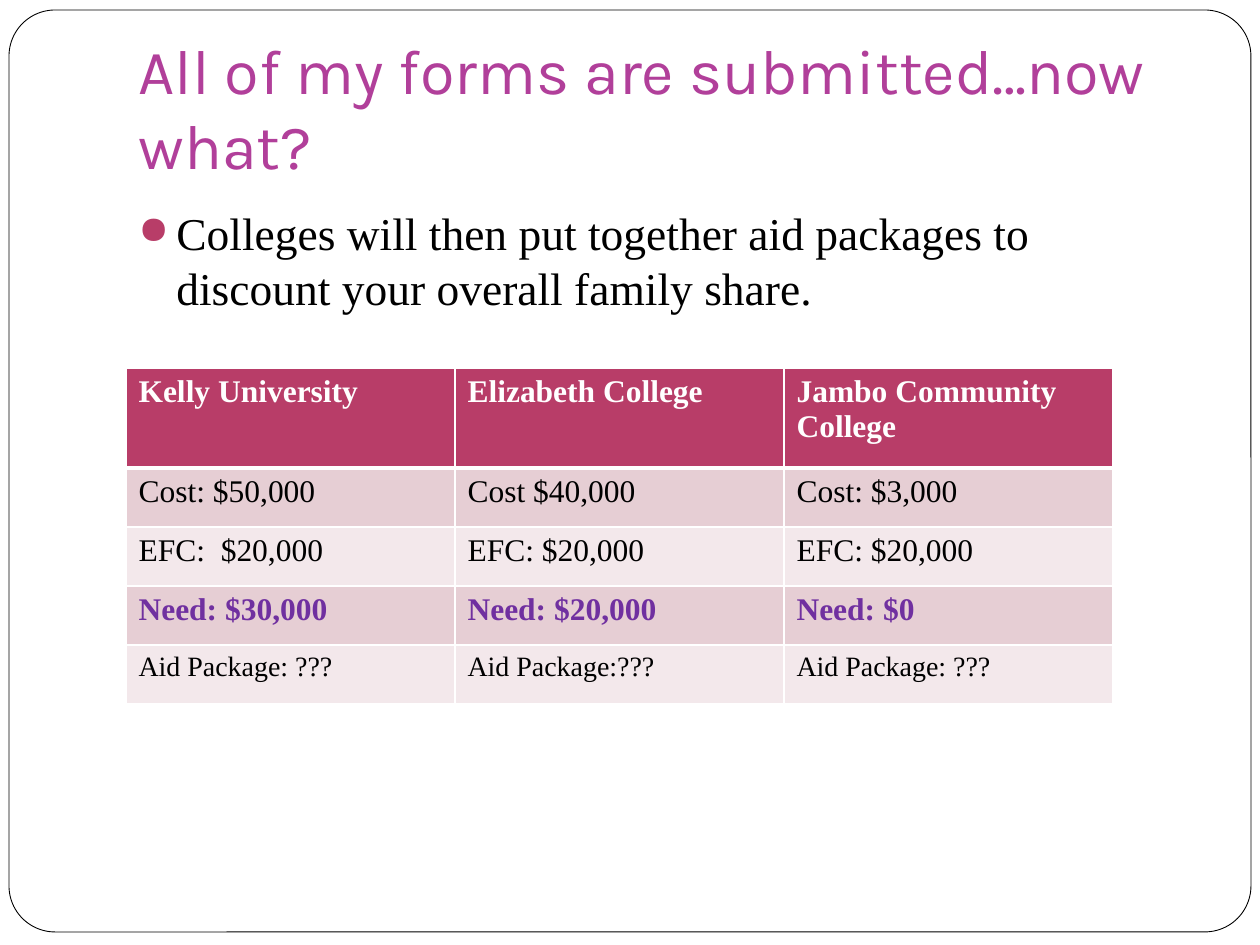
from lxml.etree import SubElement
from pptx import Presentation
from pptx.dml.color import RGBColor
from pptx.enum.shapes import MSO_SHAPE
from pptx.enum.text import MSO_ANCHOR, MSO_AUTO_SIZE, PP_ALIGN
from pptx.oxml.ns import qn
from pptx.util import Emu, Pt

PX_PER_INCH = 126
COLORS = {
    "white": "FFFFFF",
    "black": "000000",
    "title": "B13F9A",
    "accent": "B83D68",
    "band_dark": "E6CED4",
    "band_light": "F3E8EB",
    "need": "7030A0",
}
TITLE_FONT = "Karla"
BODY_FONT = "Times New Roman"

HEADER_HEIGHT, ROW_HEIGHT = 100, 59
COLLEGES = ["Kelly University", "Elizabeth College", "Jambo Community College"]
# Row texts, fill, text colour, size, bold
AID_ROWS = [
    (COLLEGES, "accent", "white", 18, True),
    (["Cost: $50,000", "Cost $40,000", "Cost: $3,000"], "band_dark", "black", 18, False),
    (["EFC:  $20,000", "EFC: $20,000", "EFC: $20,000"], "band_light", "black", 18, False),
    (["Need: $30,000", "Need: $20,000", "Need: $0"], "band_dark", "need", 18, True),
    (["Aid Package: ???", "Aid Package:???", "Aid Package: ???"], "band_light", "black", 16, False),
]


def px(length):
    return Emu(round(length * 914400 / PX_PER_INCH))


def rgb(name):
    return RGBColor.from_string(COLORS[name])


def style_font(paragraph, face, size, color, bold=False):
    font = paragraph.font
    font.name, font.size, font.bold = face, Pt(size), bold
    font.color.rgb = rgb(color)


def add_frame(slide, box):
    frame = slide.shapes.add_shape(MSO_SHAPE.ROUNDED_RECTANGLE, *map(px, box))
    frame.adjustments[0] = 0.05
    frame.shadow.inherit = False
    frame.fill.solid()
    frame.fill.fore_color.rgb = rgb("white")
    frame.line.color.rgb = rgb("black")
    frame.line.width = Pt(0.5)
    # The frame lies behind the title
    slide.shapes.title.element.addprevious(frame.element)


def place_title(slide, box):
    title = slide.shapes.title
    title.left, title.top, title.width, title.height = map(px, box)
    text = title.text_frame
    text.text = "All of my forms are submitted…now what?"
    text.word_wrap = True
    text.auto_size = MSO_AUTO_SIZE.NONE
    text.vertical_anchor = MSO_ANCHOR.BOTTOM
    text.margin_bottom = Pt(7.2)
    paragraph = text.paragraphs[0]
    paragraph.alignment = PP_ALIGN.LEFT
    style_font(paragraph, TITLE_FONT, 36, "title")


def add_bullet(paragraph, indent):
    properties = paragraph._p.get_or_add_pPr()
    properties.set("marL", str(indent))
    properties.set("indent", str(-indent))
    bullet_color = SubElement(properties, qn("a:buClr"))
    SubElement(bullet_color, qn("a:srgbClr"), val=COLORS["accent"])
    SubElement(properties, qn("a:buSzPct"), val="85000")
    SubElement(properties, qn("a:buChar"), char="●")


def add_explanation(slide, box):
    text = slide.shapes.add_textbox(*map(px, box)).text_frame
    text.word_wrap = True
    paragraph = text.paragraphs[0]
    paragraph.text = ("Colleges will then put together aid packages to "
                      "discount your overall family share.")
    paragraph.space_before = Pt(5.8)
    add_bullet(paragraph, px(38))
    style_font(paragraph, BODY_FONT, 26, "black")


def set_borders(cell, widths):
    properties = cell._tc.get_or_add_tcPr()
    for side, width in widths.items():
        line = SubElement(properties, qn(f"a:ln{side}"), w=str(Pt(width)))
        fill = SubElement(line, qn("a:solidFill"))
        SubElement(fill, qn("a:srgbClr"), val=COLORS["white"])


def add_aid_table(slide, box):
    table = slide.shapes.add_table(len(AID_ROWS), len(COLLEGES), *map(px, box)).table
    for column in table.columns:
        column.width = px(box[2] // len(COLLEGES))
    for r, (texts, fill, color, size, bold) in enumerate(AID_ROWS):
        table.rows[r].height = px(ROW_HEIGHT if r else HEADER_HEIGHT)
        # A thick rule parts the header from the rows
        widths = {"L": 1, "R": 1, "T": 3 if r == 1 else 1, "B": 1 if r else 3}
        for c, text in enumerate(texts):
            cell = table.cell(r, c)
            cell.text = text
            set_borders(cell, widths)
            cell.fill.solid()
            cell.fill.fore_color.rgb = rgb(fill)
            style_font(cell.text_frame.paragraphs[0], BODY_FONT, size, color, bold)


def main():
    presentation = Presentation()
    presentation.slide_width, presentation.slide_height = px(1260), px(945)
    slide = presentation.slides.add_slide(presentation.slide_layouts[5])
    add_frame(slide, (9, 10, 1242, 922))
    place_title(slide, (126, 38, 1071, 157))
    add_explanation(slide, (126, 199, 1071, 630))
    add_aid_table(slide, (126, 368, 987, HEADER_HEIGHT + 4 * ROW_HEIGHT))
    presentation.save("out.pptx")


if __name__ == "__main__":
    main()
